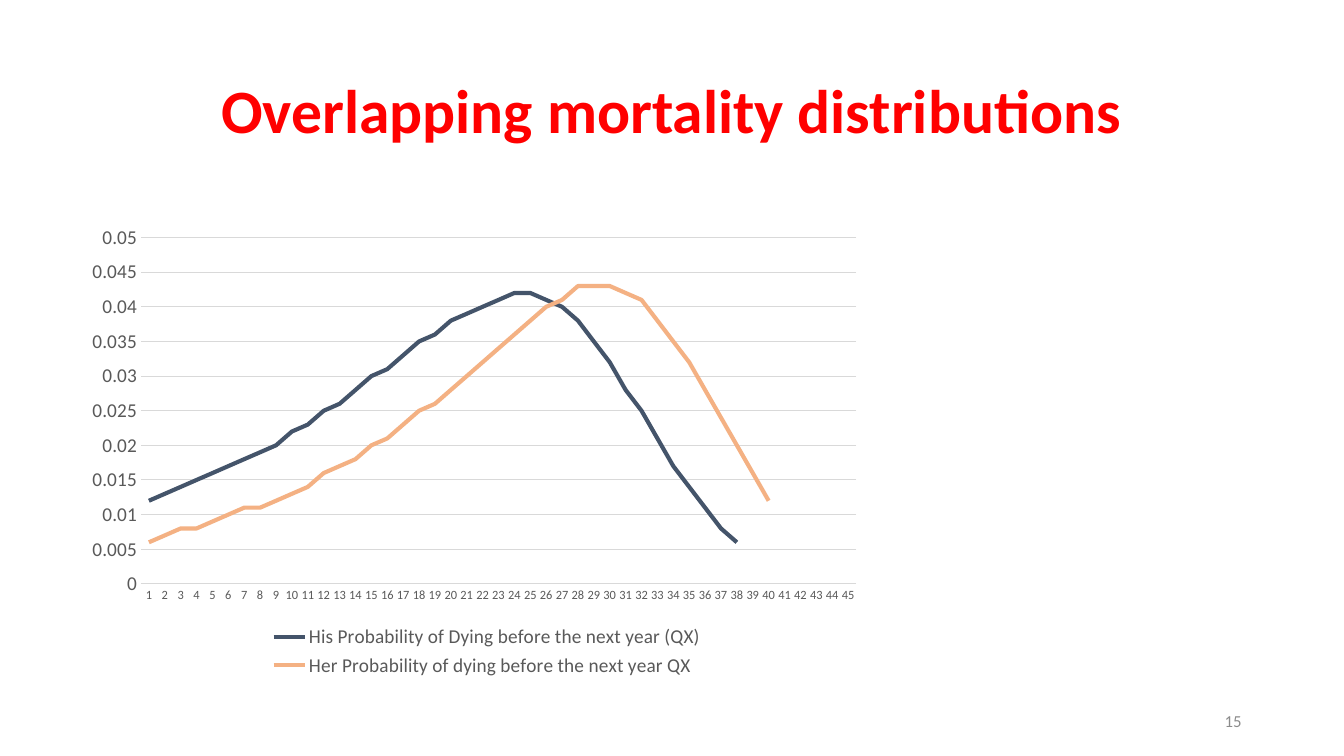
from dataclasses import dataclass

from lxml import etree
from pptx import Presentation
from pptx.chart import data as cd
from pptx.dml.color import RGBColor
from pptx.enum import chart as ce, text as te
from pptx.oxml import ns
from pptx.util import Pt

FONT = "Calibri"
GREY, RULE = "595959", "D9D9D9"
YEARS = 45


@dataclass
class Label:
    text: str
    box: tuple[float, float, float, float]
    size: float
    color: str
    align: te.PP_ALIGN
    bold: bool = False
    space: float = 1.0


@dataclass
class Curve:
    name: str
    color: str
    mills: list[int]  # deaths per thousand, year by year


LABELS = [
    Label("Overlapping mortality distributions", (66, 28.8, 828, 104.4),
          44, "FF0000", te.PP_ALIGN.CENTER, True, 0.9),
    Label("15", (678, 500.5, 216, 28.75), 12, "8C8C8C", te.PP_ALIGN.RIGHT),
]
CURVES = [
    Curve("His Probability of Dying before the next year (QX)", "44546A",
          [12, 13, 14, 15, 16, 17, 18, 19, 20, 22, 23, 25, 26, 28, 30, 31, 33,
           35, 36, 38, 39, 40, 41, 42, 42, 41, 40, 38, 35, 32, 28, 25, 21, 17,
           14, 11, 8, 6]),
    Curve("Her Probability of dying before the next year QX", "F4B183",
          [6, 7, 8, 8, 9, 10, 11, 11, 12, 13, 14, 16, 17, 18, 20, 21, 23, 25,
           26, 28, 30, 32, 34, 36, 38, 40, 41, 43, 43, 43, 42, 41, 38, 35, 32,
           28, 24, 20, 16, 12]),
]
CHART_BOX = (66, 144, 553.7, 342.7)
PLOT = {"x": 0.045, "y": 0.075, "w": 0.94, "h": 0.722}


def rgb(color: str) -> RGBColor:
    return RGBColor.from_string(color)


def style(font, size: float, color: str, bold: bool = False) -> None:
    font.name, font.size, font.bold = FONT, Pt(size), bold
    font.color.rgb = rgb(color)


def stroke(line, color: str, width: float) -> None:
    line.color.rgb = rgb(color)
    line.width = Pt(width)


def add_label(slide, label: Label) -> None:
    frame = slide.shapes.add_textbox(*map(Pt, label.box)).text_frame
    frame.word_wrap = True
    frame.vertical_anchor = te.MSO_ANCHOR.MIDDLE
    frame.text = label.text
    para = frame.paragraphs[0]
    para.alignment, para.line_spacing = label.align, label.space
    style(para.runs[0].font, label.size, label.color, label.bold)


def set_plot(chart) -> None:
    """Fix the inner plot area as fractions of the chart."""
    area = chart.plots[0]._element.getparent()
    for old in area.findall(ns.qn("c:layout")):
        area.remove(old)
    layout = etree.Element(ns.qn("c:layout"))
    area.insert(0, layout)
    manual = etree.SubElement(layout, ns.qn("c:manualLayout"))
    parts = {"layoutTarget": "inner", "xMode": "edge", "yMode": "edge", **PLOT}
    for tag, val in parts.items():
        etree.SubElement(manual, ns.qn(f"c:{tag}")).set("val", str(val))


def add_curves(slide, curves: list[Curve]) -> None:
    data = cd.CategoryChartData()
    data.categories = [str(year) for year in range(1, YEARS + 1)]
    for curve in curves:
        gap = [None] * (YEARS - len(curve.mills))
        data.add_series(curve.name, [mill / 1000 for mill in curve.mills] + gap)
    chart = slide.shapes.add_chart(
        ce.XL_CHART_TYPE.LINE, *map(Pt, CHART_BOX), data).chart
    style(chart.font, 10, "000000")
    chart.has_title = False
    chart.plots[0].vary_by_categories = False
    for curve, line in zip(curves, chart.plots[0].series):
        line.smooth = False
        line.marker.style = ce.XL_MARKER_STYLE.NONE
        stroke(line.format.line, curve.color, 3)

    years, odds = chart.category_axis, chart.value_axis
    for axis, size in ((years, 9), (odds, 14)):
        axis.major_tick_mark = axis.minor_tick_mark = ce.XL_TICK_MARK.NONE
        style(axis.tick_labels.font, size, GREY)
    stroke(years.format.line, RULE, 0.75)
    odds.format.line.fill.background()
    odds.has_major_gridlines = True
    stroke(odds.major_gridlines.format.line, RULE, 0.75)
    odds.minimum_scale, odds.maximum_scale, odds.major_unit = 0, 0.05, 0.005

    chart.has_legend = True
    chart.legend.position = ce.XL_LEGEND_POSITION.BOTTOM
    chart.legend.include_in_layout = False
    style(chart.legend.font, 14, GREY)
    set_plot(chart)


def main() -> None:
    deck = Presentation()
    deck.slide_width, deck.slide_height = Pt(960), Pt(540)
    slide = deck.slides.add_slide(deck.slide_layouts[6])
    for label in LABELS:
        add_label(slide, label)
    add_curves(slide, CURVES)
    deck.save("out.pptx")


if __name__ == "__main__":
    main()
